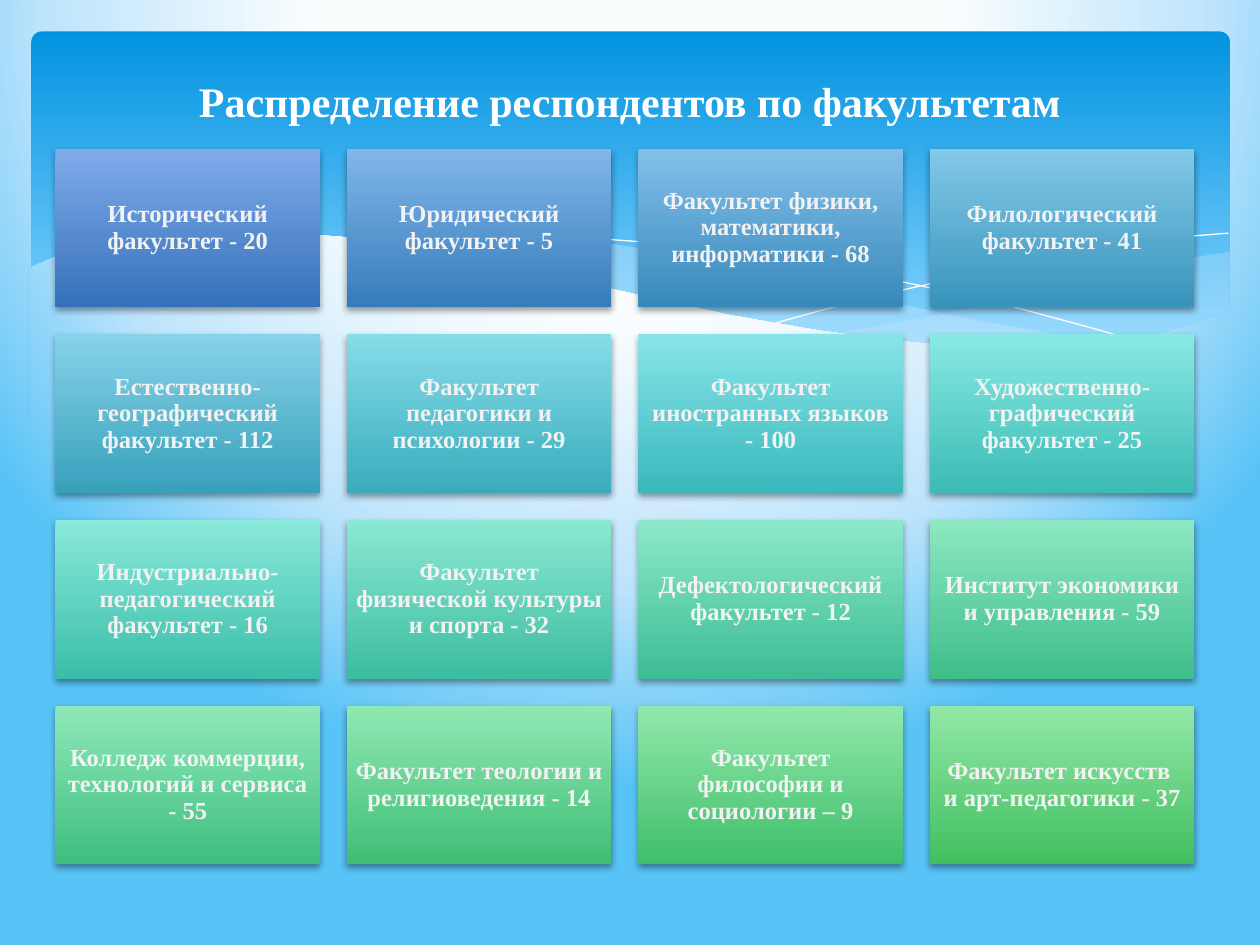
"""Build the slide showing how survey respondents are spread over faculties."""
from dataclasses import dataclass
from typing import Optional

import lxml.etree
import pptx
import pptx.dml.color
import pptx.enum.shapes
import pptx.enum.text
import pptx.oxml
import pptx.oxml.ns
import pptx.util

Inches = pptx.util.Inches
qn = pptx.oxml.ns.qn
Stops = tuple[tuple[int, str], ...]
Points = tuple[tuple[float, float], ...]


@dataclass(frozen=True)
class Theme:
    font: str = "Times New Roman"
    title_size: int = 24
    card_size: int = 14
    white: str = "FFFFFF"
    card_text: str = "F2F2F2"
    wave: str = "C6E7FC"
    background: Stops = ((40, "FAFDFE"), (74, "BEE4FC"), (100, "58C3F6"))
    banner: Stops = ((0, "0293E0"), (90, "83D3FE"))
    card_fills: tuple[tuple[str, str], ...] = (
        ("80ACEA", "3570BA"), ("81B6EA", "367CBA"), ("82C0EA", "3788BB"), ("83C9E9", "3894BB"),
        ("85D3E9", "38A0BB"), ("86DCE9", "39ACBC"), ("87E5E9", "3AB8BC"), ("88E9E3", "3BBCB5"),
        ("89E9DA", "3BBDAA"), ("8BE8D2", "3CBDA0"), ("8CE8CA", "3DBD95"), ("8DE8C2", "3EBE8A"),
        ("8FE8BA", "3FBE7F"), ("90E8B3", "3FBE75"), ("91E8AC", "40BF6A"), ("92E8A6", "41BF60"),
    )


@dataclass(frozen=True)
class Wave:
    points: Points
    alpha: Optional[int] = None
    closed: bool = True


@dataclass(frozen=True)
class Grid:
    left: float = 0.44
    top: float = 1.18
    width: float = 9.04
    height: float = 5.68
    card_width: float = 2.1
    card_height: float = 1.26
    count: int = 4

    def cell(self, index: int) -> tuple[float, float]:
        row, col = divmod(index, self.count)
        dx = (self.width - self.card_width) / (self.count - 1)
        dy = (self.height - self.card_height) / (self.count - 1)
        return self.left + col * dx, self.top + row * dy


THEME = Theme()
GRID = Grid()
TITLE = "Распределение респондентов по факультетам"
FACULTIES = (
    "Исторический факультет - 20",
    "Юридический факультет - 5",
    "Факультет физики, математики, информатики - 68",
    "Филологический факультет - 41",
    "Естественно-географический факультет - 112",
    "Факультет педагогики и психологии - 29",
    "Факультет иностранных языков - 100",
    "Художественно-графический факультет - 25",
    "Индустриально-педагогический факультет - 16",
    "Факультет физической культуры и спорта - 32",
    "Дефектологический факультет - 12",
    "Институт экономики и управления - 59",
    "Колледж коммерции, технологий и сервиса - 55",
    "Факультет теологии и религиоведения - 14",
    "Факультет философии и социологии – 9",
    "Факультет искусств  и арт-педагогики - 37",
)
WAVES = (
    Wave(((9.76, 2), (9.48, 2.04), (9.21, 2.1), (8.61, 2.23), (8.05, 2.37), (7.53, 2.48),
          (7.06, 2.57), (6.61, 2.65), (6.91, 2.69), (7.32, 2.74), (7.69, 2.77), (8.14, 2.78),
          (8.54, 2.76), (8.89, 2.72), (9.21, 2.65), (9.49, 2.57), (9.76, 2.47)), alpha=29),
    Wave(((8.93, 2.73), (8.37, 2.65), (7.75, 2.54), (7.06, 2.4), (6.29, 2.22), (5.84, 2.11),
          (5.41, 2.03), (5.02, 1.96), (4.65, 1.91), (4.2, 1.87), (3.8, 1.85), (3.44, 1.86),
          (3.13, 1.88), (2.86, 1.91), (3.23, 1.96), (3.62, 2.03), (4.04, 2.11), (4.49, 2.22),
          (4.91, 2.32), (5.3, 2.4), (5.84, 2.52), (6.34, 2.61), (6.8, 2.68), (7.22, 2.74),
          (7.61, 2.77), (8.07, 2.78), (8.48, 2.77)), alpha=40),
    Wave(((3.09, 1.95), (3.28, 1.92), (3.53, 1.89), (3.87, 1.87), (4.33, 1.87), (4.69, 1.89),
          (5.1, 1.92), (5.56, 1.97), (6.08, 2.04), (6.65, 2.13), (7.27, 2.26), (7.95, 2.41),
          (8.69, 2.61), (9.07, 2.72)), closed=False),
    Wave(((6.13, 2.57), (6.53, 2.46), (6.95, 2.35), (7.48, 2.23), (8.06, 2.1), (8.66, 1.99),
          (9.1, 1.92), (9.38, 1.88), (9.75, 1.85)), closed=False),
    Wave(((9.77, 2.46), (9.5, 2.56), (9.2, 2.65), (8.87, 2.71), (8.5, 2.75), (8.09, 2.77),
          (7.61, 2.75), (7.08, 2.7), (6.48, 2.62), (5.79, 2.5), (5.29, 2.39), (4.75, 2.27),
          (4.18, 2.13), (3.65, 2.02), (3.16, 1.94), (2.71, 1.88), (2.3, 1.85), (1.93, 1.84),
          (1.61, 1.84), (1.32, 1.86), (1.06, 1.89), (0.85, 1.93), (0.67, 1.97), (0.46, 2.03),
          (0.36, 2.07), (0.23, 2.13), (0.23, 3.29), (9.77, 3.29))),
)


def rgb(value: str) -> pptx.dml.color.RGBColor:
    return pptx.dml.color.RGBColor.from_string(value)


def set_gradient(fill, parent, stops: Stops, radial: bool = False) -> None:
    fill.solid()
    solid = parent.find(qn("a:solidFill"))
    grad = parent.makeelement(qn("a:gradFill"), {"rotWithShape": "1"})
    gs_list = lxml.etree.SubElement(grad, qn("a:gsLst"))
    for position, color in stops:
        gs = lxml.etree.SubElement(gs_list, qn("a:gs"), pos=str(position * 1000))
        lxml.etree.SubElement(gs, qn("a:srgbClr"), val=color)
    if radial:
        path = lxml.etree.SubElement(grad, qn("a:path"), path="circle")
        lxml.etree.SubElement(path, qn("a:fillToRect"), l="20000", t="-40000", r="20000", b="140000")
    else:
        lxml.etree.SubElement(grad, qn("a:lin"), ang="5400000", scaled="0")
    parent.replace(solid, grad)


def add_block(slide, kind, left: float, top: float, width: float, height: float, stops: Stops):
    sp = slide.shapes.add_shape(kind, Inches(left), Inches(top), Inches(width), Inches(height))
    sp.shadow.inherit = False
    set_gradient(sp.fill, sp.element.spPr, stops)
    sp.line.fill.background()
    return sp


def add_wave(slide, wave: Wave) -> None:
    (x, y), *rest = [(Inches(px), Inches(py)) for px, py in wave.points]
    builder = slide.shapes.build_freeform(x, y)
    builder.add_line_segments(rest, close=wave.closed)
    sp = builder.convert_to_shape()
    sp.shadow.inherit = False
    if not wave.closed:
        sp.fill.background()
        sp.line.color.rgb = rgb(THEME.white)
        sp.line.width = pptx.util.Pt(0)
        return
    if wave.alpha is None:
        sp.element.set("useBgFill", "1")
        sp.element.remove(sp.element.find(qn("p:style")))
    else:
        sp.fill.solid()
        sp.fill.fore_color.rgb = rgb(THEME.wave)
        color = sp.element.spPr.find(qn("a:solidFill"))[0]
        lxml.etree.SubElement(color, qn("a:alpha"), val=str(wave.alpha * 1000))
    sp.line.fill.background()


def set_text(sp, text: str, size: int, color: str) -> None:
    tf = sp.text_frame
    tf.word_wrap = True
    tf.vertical_anchor = pptx.enum.text.MSO_ANCHOR.MIDDLE
    tf.text = text
    p = tf.paragraphs[0]
    p.alignment = pptx.enum.text.PP_ALIGN.CENTER
    font = p.runs[0].font
    font.name, font.size, font.bold = THEME.font, pptx.util.Pt(size), True
    font.color.rgb = rgb(color)


def add_card(slide, index: int, label: str, fills: tuple[str, str]) -> None:
    left, top = GRID.cell(index)
    sp = add_block(slide, pptx.enum.shapes.MSO_SHAPE.RECTANGLE, left, top,
                   GRID.card_width, GRID.card_height, tuple(zip((0, 100), fills)))
    effects = sp.element.spPr.find(qn("a:effectLst"))
    shadow = lxml.etree.SubElement(effects, qn("a:outerShdw"), blurRad=str(pptx.util.Pt(4)),
                                   dist=str(pptx.util.Pt(2)), dir="5400000", rotWithShape="0")
    color = lxml.etree.SubElement(shadow, qn("a:srgbClr"), val="000000")
    lxml.etree.SubElement(color, qn("a:alpha"), val="38000")
    set_text(sp, label, THEME.card_size, THEME.card_text)
    tf = sp.text_frame
    tf.margin_left = tf.margin_right = tf.margin_top = tf.margin_bottom = Inches(0.06)
    tf.paragraphs[0].line_spacing = 0.9


def main() -> None:
    prs = pptx.Presentation()
    prs.slide_width, prs.slide_height = Inches(10), Inches(7.5)
    slide = prs.slides.add_slide(prs.slide_layouts[6])
    fill = slide.background.fill
    set_gradient(fill, slide.element.find(".//" + qn("p:bgPr")), THEME.background, radial=True)
    banner = add_block(slide, pptx.enum.shapes.MSO_SHAPE.ROUNDED_RECTANGLE,
                       0.25, 0.25, 9.51, 2.7, THEME.banner)
    banner.adjustments[0] = 0.03
    for wave in WAVES:
        add_wave(slide, wave)
    title = slide.shapes.add_textbox(Inches(0.5), Inches(0.37), Inches(9), Inches(0.86))
    set_text(title, TITLE, THEME.title_size, THEME.white)
    for index, (label, fills) in enumerate(zip(FACULTIES, THEME.card_fills)):
        add_card(slide, index, label, fills)
    prs.save("out.pptx")


if __name__ == "__main__":
    main()
